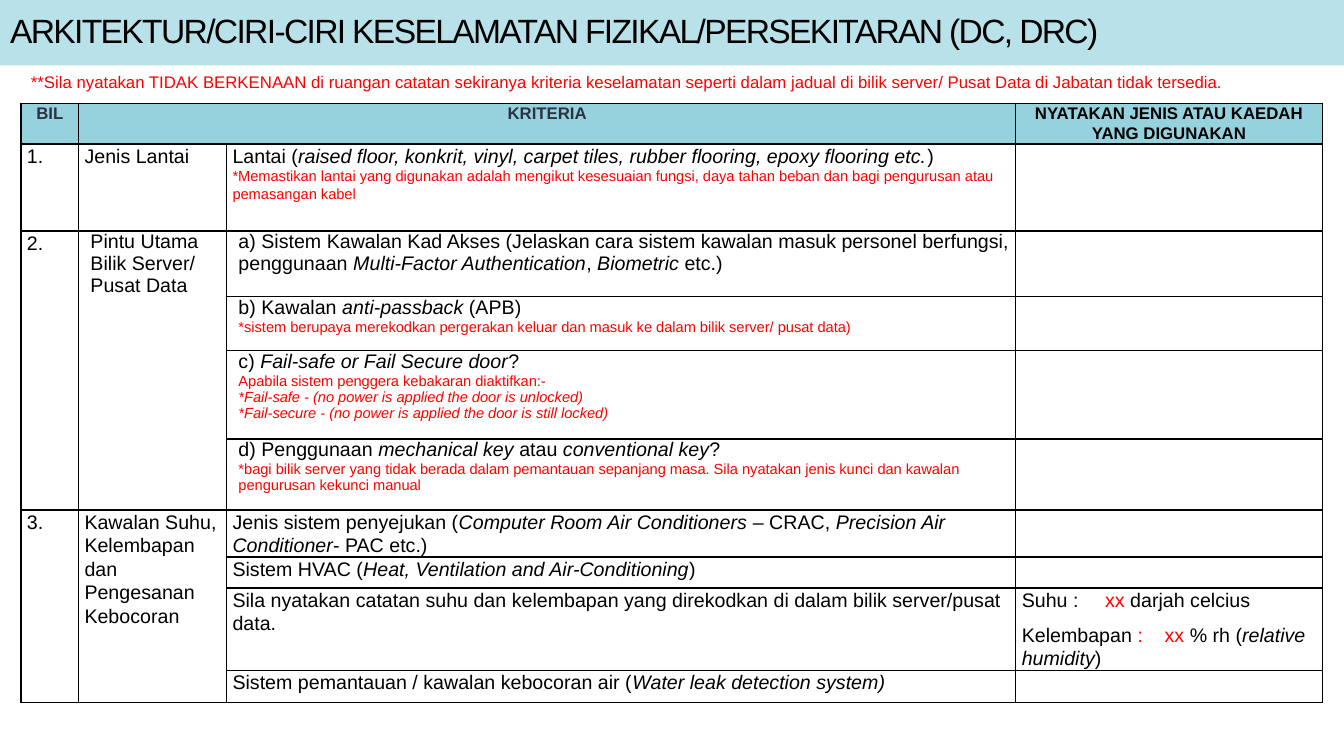
from lxml.etree import SubElement
from pptx import Presentation
from pptx.dml.color import RGBColor
from pptx.enum.text import MSO_ANCHOR, MSO_AUTO_SIZE, PP_ALIGN
from pptx.oxml.ns import qn
from pptx.util import Cm, Pt

COLORS = {"black": "000000", "red": "FF0000", "slate": "2C3242",
          "title band": "B9E1E9", "header": "96D2DE"}
FONT = "Arial"
COLUMN_WIDTHS = [1.45, 3.73, 19.89, 7.72]
ROW_HEIGHTS = [1.03, 2.19, 1.66, 1.36, 2.22, 1.79, 1.18, 0.78, 2.07, 0.81]
MERGES = [((0, 1), (0, 2)), ((2, 0), (5, 0)), ((2, 1), (5, 1)),
          ((6, 0), (9, 0)), ((6, 1), (9, 1))]
TAB_STOPS = [2.1, 3.6]

PLAIN = {"size": 14, "color": "black"}
ITALIC = {**PLAIN, "italic": True}
RED = {**PLAIN, "color": "red"}
NOTE = {"size": 10.5, "color": "red"}
NOTE_ITALIC = {**NOTE, "italic": True}
HEADING = {"size": 12, "color": "slate", "bold": True}
HEADING_BLACK = {**HEADING, "color": "black"}

TITLE = "ARKITEKTUR/CIRI-CIRI KESELAMATAN FIZIKAL/PERSEKITARAN (DC, DRC)"
INSTRUCTION = ("**Sila nyatakan TIDAK BERKENAAN di ruangan catatan sekiranya kriteria keselamatan "
               "seperti dalam jadual di bilik server/ Pusat Data di Jabatan tidak tersedia.")

HEADINGS = {
    (0, 0): [[("BIL", HEADING)]],
    (0, 1): [[("KRITERIA", HEADING)]],
    (0, 3): [[("NYATAKAN JENIS ATAU KAEDAH YANG DIGUNAKAN", HEADING_BLACK)]],
}
SPACED_CELLS = {
    (1, 0): [[("1.", PLAIN)]],
    (1, 1): [[("Jenis Lantai", PLAIN)]],
    (1, 2): [[("Lantai (", PLAIN),
              ("raised floor, konkrit, vinyl, carpet tiles, rubber flooring, epoxy flooring etc.", ITALIC),
              (")", PLAIN), None,
              ("*Memastikan lantai yang digunakan adalah mengikut kesesuaian fungsi, daya tahan "
               "beban dan bagi pengurusan atau pemasangan kabel", NOTE)]],
    (2, 0): [[("2.", PLAIN)]],
    (6, 0): [[("3.", PLAIN)]],
    (6, 1): [[("Kawalan Suhu, Kelembapan dan Pengesanan Kebocoran", PLAIN)]],
    (6, 2): [[("Jenis sistem penyejukan (", PLAIN), ("Computer Room Air Conditioners ", ITALIC),
              ("– CRAC, ", PLAIN), ("Precision Air Conditioner", ITALIC), ("- PAC etc.)", PLAIN)]],
    (7, 2): [[("Sistem HVAC (", PLAIN), ("Heat, Ventilation and Air-Conditioning", ITALIC),
              (")", PLAIN)]],
    (8, 2): [[("Sila nyatakan catatan suhu dan kelembapan yang direkodkan di dalam bilik "
               "server/pusat data.", PLAIN)]],
    (8, 3): [[("Suhu :\t", PLAIN), ("xx ", RED), ("darjah celcius", PLAIN)],
             [("Kelembapan ", PLAIN), (":\txx ", RED), ("% rh (", PLAIN),
              ("relative humidity", ITALIC), (")", PLAIN)]],
    (9, 2): [[("Sistem pemantauan / kawalan kebocoran air (", PLAIN),
              ("Water leak detection system)", ITALIC)]],
}
INDENTED_CELLS = {
    (2, 1): [[("Pintu Utama Bilik Server/ Pusat Data", PLAIN)]],
    (2, 2): [[("a) Sistem Kawalan Kad Akses (Jelaskan cara sistem kawalan masuk personel "
               "berfungsi, penggunaan ", PLAIN), ("Multi-Factor Authentication", ITALIC),
              (", ", PLAIN), ("Biometric ", ITALIC), ("etc.)", PLAIN)]],
    (3, 2): [[("b) Kawalan", PLAIN), (" anti-passback ", ITALIC), ("(APB)", PLAIN)],
             [("*sistem berupaya merekodkan pergerakan keluar dan masuk ke dalam bilik server/ "
               "pusat data)", NOTE)]],
    (4, 2): [[("c) ", PLAIN), ("Fail-safe or Fail Secure door", ITALIC), ("?", PLAIN)],
             [("Apabila sistem penggera kebakaran diaktifkan:-", NOTE)],
             [("*Fail-safe - (no power is applied the door is unlocked)", NOTE_ITALIC)],
             [("*Fail-secure - (no power is applied the door is still locked)", NOTE_ITALIC)]],
    (5, 2): [[("d) Penggunaan ", PLAIN), ("mechanical key ", ITALIC), ("atau ", PLAIN),
              ("conventional key", ITALIC), ("?", PLAIN)],
             [("*bagi bilik server yang tidak berada dalam pemantauan sepanjang masa. Sila nyatakan "
               "jenis kunci dan kawalan pengurusan kekunci manual", NOTE)]],
}


def color(name):
    """Return the named palette colour."""
    return RGBColor.from_string(COLORS[name])


def add_run(paragraph, text, style):
    """Append one styled run and return it."""
    run = paragraph.add_run()
    run.text = text
    run.font.name = FONT
    run.font.size = Pt(style["size"])
    run.font.bold = style.get("bold", False)
    run.font.italic = style.get("italic", False)
    run.font.color.rgb = color(style["color"])
    return run


def fill_text(frame, paragraphs, alignment=PP_ALIGN.LEFT, indented=False):
    """Write paragraphs of runs, where None stands for a line break."""
    for index, runs in enumerate(paragraphs):
        paragraph = frame.add_paragraph() if index else frame.paragraphs[0]
        paragraph.alignment = alignment
        paragraph.line_spacing = 1.0 if indented else 1.07
        paragraph.space_after = Pt(0 if indented else 8)
        properties = paragraph._p.get_or_add_pPr()
        if indented:
            properties.set("marL", str(Cm(0.15)))
        if any(run and "\t" in run[0] for run in runs):
            tabs = SubElement(properties, qn("a:tabLst"))
            SubElement(tabs, qn("a:tab"), pos=str(Cm(TAB_STOPS[index])), algn="l")
        for run in runs:
            if run is None:
                paragraph.add_line_break()
            else:
                add_run(paragraph, *run)


def add_borders(cell):
    """Draw a thin black line on every side of a cell."""
    properties = cell._tc.get_or_add_tcPr()
    for side in ("a:lnL", "a:lnR", "a:lnT", "a:lnB"):
        line = SubElement(properties, qn(side), w=str(Pt(1)))
        fill = SubElement(line, qn("a:solidFill"))
        SubElement(fill, qn("a:srgbClr"), val=COLORS["black"])


def place_title(slide, left, top, width, height):
    """Turn the title placeholder into the band across the top."""
    title = slide.shapes.title
    title.left, title.top, title.width, title.height = left, top, width, height
    title.fill.solid()
    title.fill.fore_color.rgb = color("title band")
    frame = title.text_frame
    frame.auto_size = MSO_AUTO_SIZE.NONE
    frame.vertical_anchor = MSO_ANCHOR.MIDDLE
    paragraph = frame.paragraphs[0]
    paragraph.alignment = PP_ALIGN.LEFT
    paragraph.line_spacing = 0.85
    run = add_run(paragraph, TITLE, {"size": 24, "color": "black"})
    run.font._element.set("spc", "-120")


def place_instruction(slide, left, top, width, height):
    """Add the red instruction line."""
    frame = slide.shapes.add_textbox(left, top, width, height).text_frame
    frame.word_wrap = True
    fill_text(frame, [[(INSTRUCTION, {"size": 12, "color": "red"})]])


def place_criteria_table(slide, left, top, width, height):
    """Add the table of security criteria."""
    table = slide.shapes.add_table(
        len(ROW_HEIGHTS), len(COLUMN_WIDTHS), left, top, width, height).table
    table.first_row = table.horz_banding = False
    for column, column_width in zip(table.columns, COLUMN_WIDTHS):
        column.width = Cm(column_width)
    for row, row_height in zip(table.rows, ROW_HEIGHTS):
        row.height = Cm(row_height)
    for first, last in MERGES:
        table.cell(*first).merge(table.cell(*last))
    for row_index, row in enumerate(table.rows):
        for cell in row.cells:
            cell.margin_left = cell.margin_right = Cm(0.15)
            cell.margin_top = cell.margin_bottom = 0
            add_borders(cell)
            if row_index == 0:
                cell.fill.solid()
                cell.fill.fore_color.rgb = color("header")
            else:
                cell.fill.background()
    for position, paragraphs in HEADINGS.items():
        fill_text(table.cell(*position).text_frame, paragraphs, PP_ALIGN.CENTER)
    for position, paragraphs in SPACED_CELLS.items():
        fill_text(table.cell(*position).text_frame, paragraphs)
    for position, paragraphs in INDENTED_CELLS.items():
        fill_text(table.cell(*position).text_frame, paragraphs, indented=True)


def main():
    """Build and save the slide."""
    presentation = Presentation()
    presentation.slide_width, presentation.slide_height = Cm(33.87), Cm(19.05)
    slide = presentation.slides.add_slide(presentation.slide_layouts[5])
    place_title(slide, 0, 0, presentation.slide_width, Cm(1.65))
    place_criteria_table(slide, Cm(0.53), Cm(2.6), Cm(sum(COLUMN_WIDTHS)), Cm(sum(ROW_HEIGHTS)))
    place_instruction(slide, Cm(0.53), Cm(1.65), Cm(32.46), Cm(0.77))
    presentation.save("out.pptx")


if __name__ == "__main__":
    main()
